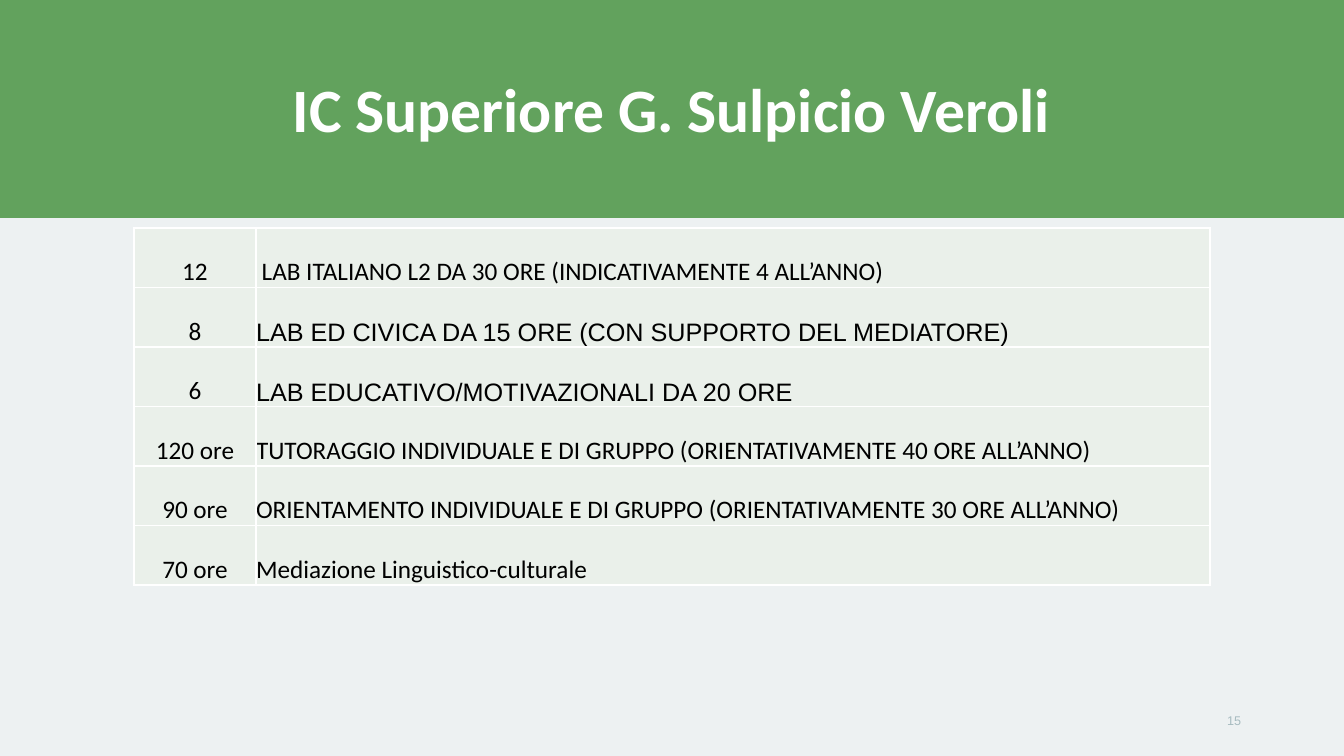
from lxml.etree import SubElement
from pptx import Presentation
from pptx.dml.color import RGBColor
from pptx.enum.shapes import MSO_SHAPE
from pptx.enum.text import MSO_ANCHOR, PP_ALIGN
from pptx.oxml.ns import qn
from pptx.util import Emu, Pt

GREEN, PALE, MIST = "62A25D", "EDF1F2", "EAF0EA"
WHITE, BLACK, GREY = "FFFFFF", "000000", "A7BBC0"
ROWS = [
    ("12", " LAB ITALIANO L2 DA 30 ORE (INDICATIVAMENTE 4 ALL’ANNO)", "Calibri"),
    ("8", "LAB ED CIVICA DA 15 ORE (CON SUPPORTO DEL MEDIATORE)", "Arial"),
    ("6", "LAB EDUCATIVO/MOTIVAZIONALI DA 20 ORE", "Arial"),
    ("120 ore", "TUTORAGGIO INDIVIDUALE E DI GRUPPO (ORIENTATIVAMENTE 40 ORE ALL’ANNO)", "Calibri"),
    ("90 ore", "ORIENTAMENTO INDIVIDUALE E DI GRUPPO (ORIENTATIVAMENTE 30 ORE ALL’ANNO)", "Calibri"),
    ("70 ore", "Mediazione Linguistico-culturale", "Calibri"),
]


def px(n):
    return Emu(round(n * 914400 / 100.8))


def color(code):
    return RGBColor.from_string(code)


def write(frame, text, font, size, ink, align, bold=False):
    para = frame.paragraphs[0]
    para.alignment = align
    run = para.add_run()
    run.text = text
    run.font.name = font
    run.font.size = Pt(size)
    run.font.bold = bold
    run.font.color.rgb = color(ink)
    return para


def label(slide, x, y, w, h, *style):
    frame = slide.shapes.add_textbox(px(x), px(y), px(w), px(h)).text_frame
    frame.word_wrap = True
    frame.vertical_anchor = MSO_ANCHOR.MIDDLE
    return write(frame, *style)


def header(slide, x, y, w, h):
    band = slide.shapes.add_shape(MSO_SHAPE.RECTANGLE, px(x), px(y), px(w), px(h))
    band.shadow.inherit = False
    band.fill.solid()
    band.fill.fore_color.rgb = color(GREEN)
    band.line.fill.background()
    title = label(slide, x + 92, y + 40, w - 184, 146,
                  "IC Superiore G. Sulpicio Veroli", "Calibri", 44, WHITE,
                  PP_ALIGN.CENTER, True)
    title.line_spacing = 0.9


def border(cell):
    """Draw a thin white line on all four sides, ahead of the cell's fill."""
    props = cell._tc.get_or_add_tcPr()
    for side in ("lnL", "lnR", "lnT", "lnB"):
        line = SubElement(props, qn(f"a:{side}"), w=str(Pt(1)))
        fill = SubElement(line, qn("a:solidFill"))
        SubElement(fill, qn("a:srgbClr"), val=WHITE)


def fill_cell(cell, text, font, align):
    cell.margin_left = cell.margin_right = cell.margin_top = cell.margin_bottom = 0
    cell.vertical_anchor = MSO_ANCHOR.BOTTOM
    border(cell)
    cell.fill.solid()
    cell.fill.fore_color.rgb = color(MIST)
    write(cell.text_frame, text, font, 18, BLACK, align)


def hours(slide, x, y, w, h):
    table = slide.shapes.add_table(len(ROWS), 2, px(x), px(y), px(w), px(h)).table
    table.first_row = table.horz_banding = False
    first = 122
    table.columns[0].width = px(first)
    table.columns[1].width = px(w - first)
    for row, (count, task, font) in zip(table.rows, ROWS):
        row.height = px(h / len(ROWS))
        fill_cell(row.cells[0], count, "Calibri", PP_ALIGN.CENTER)
        fill_cell(row.cells[1], task, font, PP_ALIGN.LEFT)


def main():
    deck = Presentation()
    deck.slide_width, deck.slide_height = px(1344), px(756)
    slide = deck.slides.add_slide(deck.slide_layouts[6])
    back = slide.background.fill
    back.solid()
    back.fore_color.rgb = color(PALE)
    header(slide, 0, 0, 1344, 218)
    label(slide, 949, 700, 302, 40, "15", "Arial", 9, GREY, PP_ALIGN.RIGHT)
    hours(slide, 134, 228, 1076, 357)
    deck.save("out.pptx")


if __name__ == "__main__":
    main()
